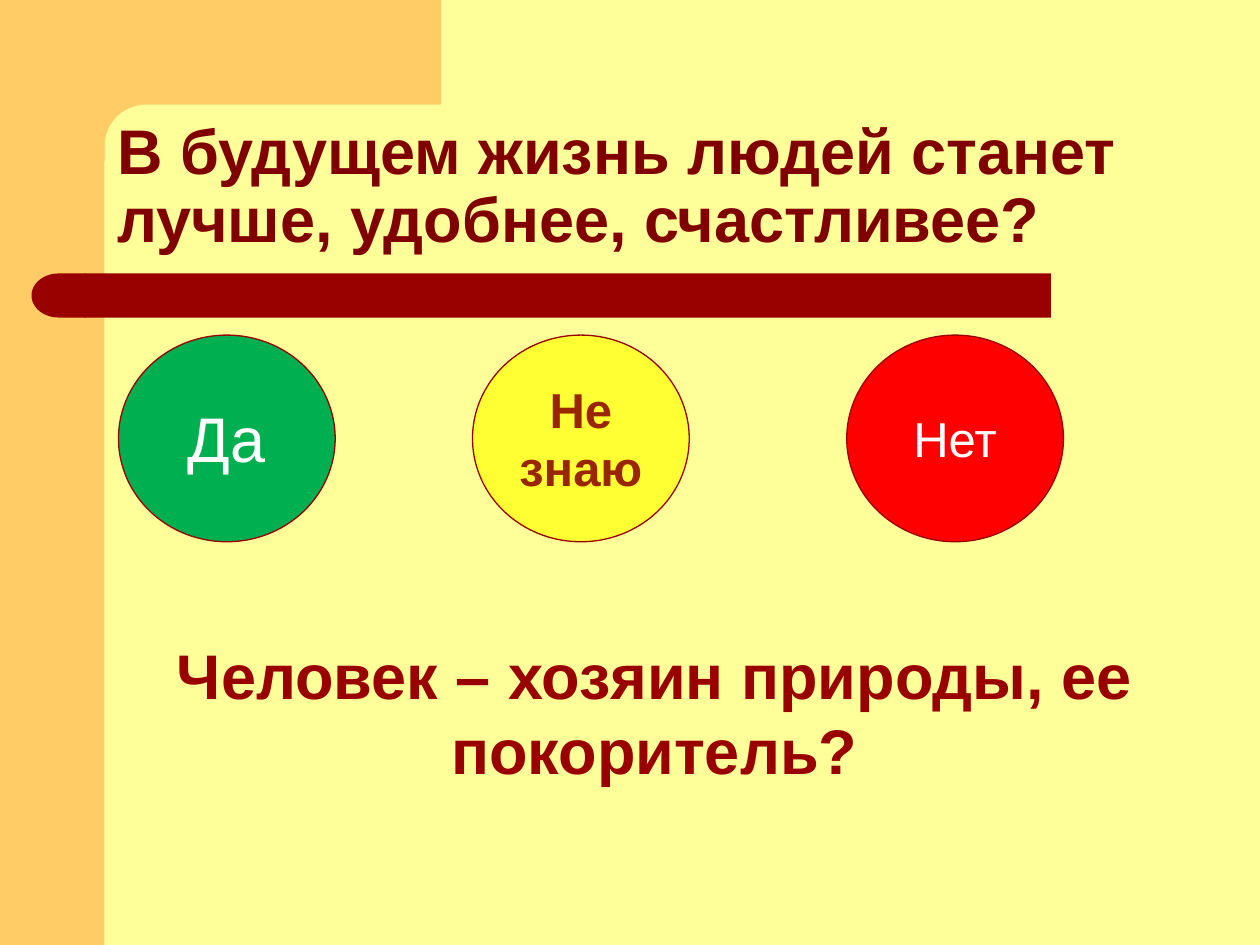
import math

import pptx
import pptx.dml.color
import pptx.enum.shapes
import pptx.enum.text
import pptx.util

Inches = pptx.util.Inches
Pt = pptx.util.Pt
RGBColor = pptx.dml.color.RGBColor
MSO_SHAPE = pptx.enum.shapes.MSO_SHAPE
MSO_ANCHOR = pptx.enum.text.MSO_ANCHOR
MSO_AUTO_SIZE = pptx.enum.text.MSO_AUTO_SIZE
PP_ALIGN = pptx.enum.text.PP_ALIGN

CREAM = RGBColor(0xFF, 0xFF, 0x99)
ORANGE = RGBColor(0xFF, 0xCC, 0x66)
DARK_RED = RGBColor(0x99, 0x00, 0x00)
MAROON = RGBColor(0x80, 0x00, 0x00)
BROWN = RGBColor(0x99, 0x26, 0x00)
GREEN = RGBColor(0x00, 0xB0, 0x50)
YELLOW = RGBColor(0xFF, 0xFF, 0x33)
RED = RGBColor(0xFF, 0x00, 0x00)
WHITE = RGBColor(0xFF, 0xFF, 0xFF)

ANSWERS = [
    ("Да", 0.94, 0.71, GREEN, {"size": Pt(36), "bold": False}, WHITE),
    ("Не знаю", 3.75, 1.04, YELLOW, {"size": Pt(28), "bold": True}, BROWN),
    ("Нет", 6.72, 0.57, RED, {"size": Pt(28), "bold": False}, WHITE),
]


def paint(shape, fill, line=None):
    """Give a shape a flat fill and an optional thin outline."""
    shape.shadow.inherit = False
    shape.fill.solid()
    shape.fill.fore_color.rgb = fill
    if line is None:
        shape.line.fill.background()
    else:
        shape.line.color.rgb = line
        shape.line.width = Pt(0.75)


def add_block(slide, kind, box, fill, line=None):
    """Add a painted preset shape in a box given in inches."""
    shape = slide.shapes.add_shape(kind, *map(Inches, box))
    paint(shape, fill, line)
    return shape


def write(shape, text, font_format, color, alignment):
    """Fill a text shape with one formatted paragraph and return it."""
    frame = shape.text_frame
    frame.word_wrap = True
    paragraph = frame.paragraphs[0]
    paragraph.alignment = alignment
    run = paragraph.add_run()
    run.text = text
    for name, value in {"name": "Arial", **font_format}.items():
        setattr(run.font, name, value)
    run.font.color.rgb = color
    return paragraph


def add_text(slide, box, text, font_format, color):
    """Add a centred text box that grows with its text."""
    text_box = slide.shapes.add_textbox(*map(Inches, box))
    write(text_box, text, font_format, color, PP_ALIGN.CENTER)
    text_box.text_frame.auto_size = MSO_AUTO_SIZE.SHAPE_TO_FIT_TEXT


def add_corner(slide, box, band, radius):
    """Draw the top band with a rounded inner corner at the side strip."""
    left, top, width, height = box
    inner = 0.83
    center_x, center_y = inner + radius, band + radius
    angles = [math.radians(degrees) for degrees in range(270, 179, -6)]
    arc = [(center_x + radius * math.cos(angle), center_y + radius * math.sin(angle))
           for angle in angles]
    points = [(left + width, top), (left + width, band), *arc,
              (inner, top + height), (left, top + height), (left, top)]
    points = [(Inches(x), Inches(y)) for x, y in points]
    builder = slide.shapes.build_freeform(*points[0])
    builder.add_line_segments(points[1:], close=True)
    paint(builder.convert_to_shape(), ORANGE)


def add_frame(slide, box):
    """Draw the orange side strip and corner, and the red bar with a round end."""
    left, top, width, height = box
    add_block(slide, MSO_SHAPE.RECTANGLE, (left, top, 0.83, height), ORANGE)
    add_corner(slide, (left + 0.5, top, 3, 1.28), 0.83, 0.33)
    bar = add_block(slide, MSO_SHAPE.ROUNDED_RECTANGLE, (0.67, 2.17, 7.67, 0.35), DARK_RED)
    bar.adjustments[0] = 0
    cap = add_block(slide, MSO_SHAPE.FLOWCHART_DELAY, (0.25, 2.17, 0.43, 0.35), DARK_RED)
    cap.rotation = 180


def add_title(slide, box):
    """Place the question in the title placeholder."""
    title = slide.shapes.title
    for name, value in zip(("left", "top", "width", "height"), box):
        setattr(title, name, Inches(value))
    title.text_frame.vertical_anchor = MSO_ANCHOR.BOTTOM
    paragraph = write(title, "В будущем жизнь людей станет лучше, удобнее, счастливее?",
                      {"size": Pt(36), "bold": True}, MAROON, PP_ALIGN.LEFT)
    paragraph.line_spacing = 0.9
    title.text_frame.auto_size = MSO_AUTO_SIZE.NONE


def add_answer(slide, box, label, label_height, fill, font_format, color):
    """Draw an answer circle with its label centred on it."""
    left, top, width, height = box
    add_block(slide, MSO_SHAPE.OVAL, box, fill, DARK_RED)
    label_width = 1.4 if label == "Нет" else 1.25
    label_box = (left + (width - label_width) / 2, top + (height - label_height) / 2,
                 label_width, label_height)
    add_text(slide, label_box, label, font_format, color)


def main():
    """Build the slide and save it."""
    presentation = pptx.Presentation()
    presentation.slide_width = Inches(10)
    presentation.slide_height = Inches(7.5)
    slide = presentation.slides.add_slide(presentation.slide_layouts[5])
    slide.background.fill.solid()
    slide.background.fill.fore_color.rgb = CREAM
    add_frame(slide, (0, 0, 10, 7.5))
    add_title(slide, (0.83, 0.83, 8.67, 1.25))
    for label, left, label_height, fill, font_format, color in ANSWERS:
        add_answer(slide, (left, 2.66, 1.72, 1.64), label, label_height,
                   fill, font_format, color)
    add_text(slide, (0.78, 5, 8.83, 1.31), "Человек – хозяин природы, ее покоритель?",
             {"size": Pt(36), "bold": True}, DARK_RED)
    presentation.save("out.pptx")


if __name__ == "__main__":
    main()
